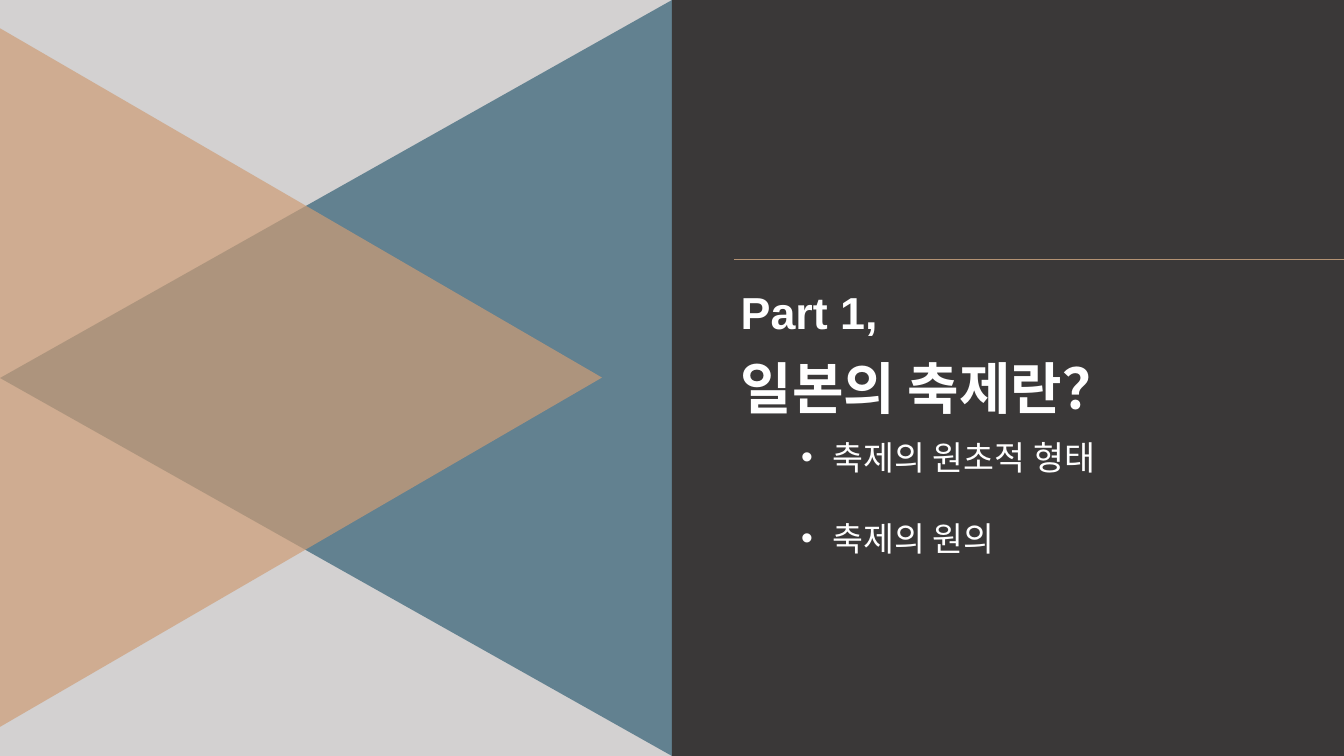
from lxml.etree import SubElement
from pptx import Presentation
from pptx.dml.color import RGBColor
from pptx.enum.shapes import MSO_CONNECTOR, MSO_SHAPE
from pptx.enum.text import MSO_ANCHOR
from pptx.oxml.ns import qn
from pptx.util import Pt

WIDTH, HEIGHT = 960, 540
HALF = WIDTH / 2
ARIAL, KOREAN = "Arial", "Noto Sans CJK KR"
WHITE = "FFFFFF"

# text, font, size, left, top, width, height
HEADINGS = [
    ("일본의 축제란？", KOREAN, 40, 522, 249.1, 396.7, 55.4),
    ("Part 1,", ARIAL, 32, 522, 199.4, 396.7, 46.1),
]
TOPICS = ["축제의 원초적 형태", "축제의 원의"]
TOPICS_BOX = (565.2, 307.4, 251.3, 94.3)
BULLET_INDENT = 22.5

# left, top, width, height as seen, rotation, colour, opacity in percent
TRIANGLES = [
    (0, 0, HALF, HEIGHT, 270, "184D65", 60),
    (0, 20.2, 430, 499, 90, "CE9D76", 70),
]


def rgb(colour):
    return RGBColor.from_string(colour)


def add_filled(kind, left, top, width, height, colour, opacity=100):
    shape = slide.shapes.add_shape(kind, Pt(left), Pt(top), Pt(width), Pt(height))
    shape.shadow.inherit = False
    shape.line.fill.background()
    shape.fill.solid()
    shape.fill.fore_color.rgb = rgb(colour)
    if opacity < 100:
        fill_colour = shape.fill._xPr.find(qn("a:solidFill"))[0]
        SubElement(fill_colour, qn("a:alpha"), val=str(opacity * 1000))
    return shape


def add_triangle(left, top, width, height, rotation, colour, opacity):
    """Place a quarter-turned triangle by the bounds it covers after turning."""
    shift = (width - height) / 2
    triangle = add_filled(MSO_SHAPE.ISOSCELES_TRIANGLE, left + shift, top - shift,
                          height, width, colour, opacity)
    triangle.rotation = rotation


def add_text(lines, font, size, left, top, width, height, bold=False):
    box = slide.shapes.add_textbox(Pt(left), Pt(top), Pt(width), Pt(height))
    frame = box.text_frame
    frame.word_wrap = True
    frame.vertical_anchor = MSO_ANCHOR.MIDDLE
    frame.text = "\n".join(lines)
    for para in frame.paragraphs:
        for span in para.runs:
            span.font.name = font
            span.font.size = Pt(size)
            span.font.bold = bold
            span.font.color.rgb = rgb(WHITE)
            SubElement(span.font._element, qn("a:ea"), typeface=KOREAN)
    return frame


def add_bullet(para):
    properties = para._p.get_or_add_pPr()
    properties.set("marL", str(Pt(BULLET_INDENT)))
    properties.set("indent", str(-Pt(BULLET_INDENT)))
    SubElement(properties, qn("a:buFont"), typeface=ARIAL)
    SubElement(properties, qn("a:buChar"), char="•")


deck = Presentation()
deck.slide_width, deck.slide_height = Pt(WIDTH), Pt(HEIGHT)
slide = deck.slides.add_slide(deck.slide_layouts[6])

add_filled(MSO_SHAPE.RECTANGLE, 0, 0, WIDTH, HEIGHT, "C8C6C6", 80)
for triangle_data in TRIANGLES:
    add_triangle(*triangle_data)
add_filled(MSO_SHAPE.RECTANGLE, HALF, 0, HALF, HEIGHT, "3A3838")

for text, *style in HEADINGS:
    add_text([text], *style, bold=True)

rule = slide.shapes.add_connector(MSO_CONNECTOR.STRAIGHT, Pt(524.2), Pt(185),
                                  Pt(WIDTH), Pt(185))
rule.line.color.rgb = rgb("B39273")
rule.line.width = Pt(0.5)
SubElement(rule._element.spPr, qn("a:effectLst"))

topics = add_text(TOPICS, ARIAL, 24, *TOPICS_BOX)
for number, para in enumerate(topics.paragraphs):
    para.line_spacing = Pt(30)
    para.space_before = Pt(28 if number else 0)
    add_bullet(para)

deck.save("out.pptx")
